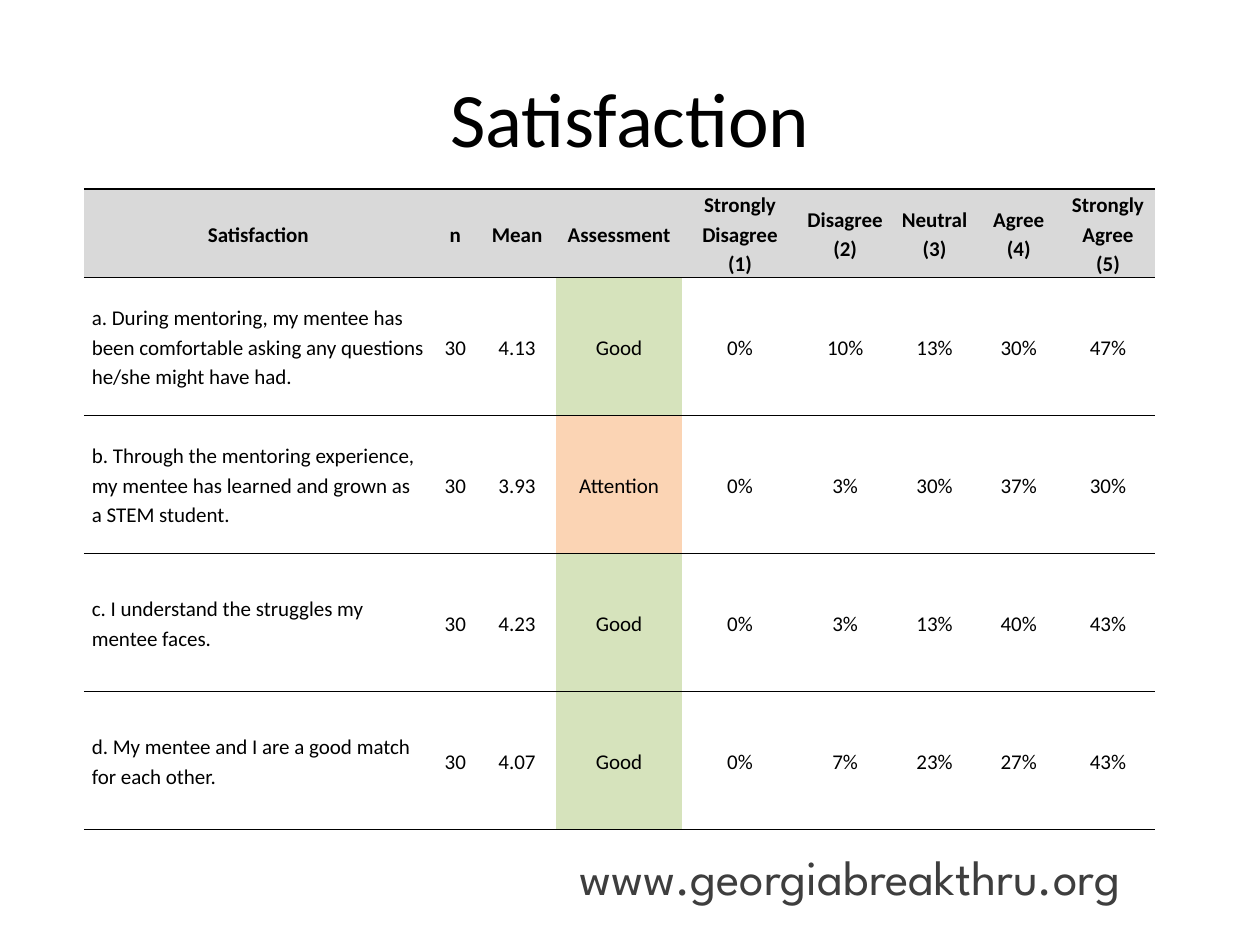
from lxml import etree
from pptx import Presentation
from pptx.dml.color import RGBColor
from pptx.enum.text import MSO_ANCHOR, PP_ALIGN
from pptx.oxml.ns import qn
from pptx.util import Pt

LEFT, CENTER = PP_ALIGN.LEFT, PP_ALIGN.CENTER
TOP, MIDDLE = MSO_ANCHOR.TOP, MSO_ANCHOR.MIDDLE

TITLE = "Satisfaction"
WEBSITE = "www.georgiabreakthru.org"
HEADERS = ["Satisfaction", "n", "Mean", "Assessment", "Strongly Disagree (1)",
           "Disagree (2)", "Neutral (3)", "Agree (4)", "Strongly Agree\n(5)"]
ANSWERS = [
    ["a. During mentoring, my mentee has been comfortable asking any questions "
     "he/she might have had.",
     "30", "4.13", "Good", "0%", "10%", "13%", "30%", "47%"],
    ["b. Through the mentoring experience, my mentee has learned and grown as "
     "a STEM student.",
     "30", "3.93", "Attention", "0%", "3%", "30%", "37%", "30%"],
    ["c. I understand the struggles my mentee faces.",
     "30", "4.23", "Good", "0%", "3%", "13%", "40%", "43%"],
    ["d. My mentee and I are a good match for each other.",
     "30", "4.07", "Good", "0%", "7%", "23%", "27%", "43%"],
]
COLUMN_WIDTHS = [199.2, 26, 44.6, 72, 66.2, 54, 48.2, 48, 54]
HEADER_HEIGHT, ANSWER_HEIGHT = 50.4, 78.9
TABLE_LEFT, TABLE_TOP = 48, 108
BLACK, HEADER_FILL = "000000", "D9D9D9"
ASSESSMENT_FILLS = {"Good": "D6E3BC", "Attention": "FBD4B4"}


def color(value):
    return RGBColor.from_string(value)


def write(frame, text, size, align, font="Calibri", ink=BLACK, bold=False, spacing=None):
    """Fill a text frame, one paragraph for each line of the text."""
    frame.word_wrap = True
    for index, line in enumerate(text.split("\n")):
        para = frame.add_paragraph() if index else frame.paragraphs[0]
        para.alignment = align
        if spacing:
            para.line_spacing = spacing
        span = para.add_run()
        span.text = line
        span.font.name = font
        span.font.size = Pt(size)
        span.font.bold = bold
        span.font.color.rgb = color(ink)


def add_text(page, place, anchor, *args, **style):
    box = page.shapes.add_textbox(*map(Pt, place))
    box.text_frame.vertical_anchor = anchor
    write(box.text_frame, *args, **style)


def set_borders(cell, top, bottom):
    """Rule a cell above and below only; widths are in points."""
    properties = cell._tc.get_or_add_tcPr()
    for side, width in (("L", 0), ("R", 0), ("T", top), ("B", bottom)):
        line = etree.SubElement(properties, qn(f"a:ln{side}"), w=str(Pt(width)))
        if width:
            fill = etree.SubElement(line, qn("a:solidFill"))
            etree.SubElement(fill, qn("a:srgbClr"), val=BLACK)
        else:
            etree.SubElement(line, qn("a:noFill"))


def add_results(page):
    rows = [HEADERS] + ANSWERS
    heights = [HEADER_HEIGHT] + [ANSWER_HEIGHT] * len(ANSWERS)
    frame = page.shapes.add_table(
        len(rows), len(HEADERS), Pt(TABLE_LEFT), Pt(TABLE_TOP),
        Pt(sum(COLUMN_WIDTHS)), Pt(sum(heights)))
    table = frame.table
    table.first_row = table.horz_banding = False
    for column, width in zip(table.columns, COLUMN_WIDTHS):
        column.width = Pt(width)
    for r, (values, height) in enumerate(zip(rows, heights)):
        table.rows[r].height = Pt(height)
        is_header = r == 0
        for c, value in enumerate(values):
            cell = table.cell(r, c)
            cell.margin_left = cell.margin_right = Pt(4.5)
            cell.margin_top = cell.margin_bottom = 0
            cell.vertical_anchor = MIDDLE
            set_borders(cell, 1 if is_header else 0.5, 0.5)
            fill = HEADER_FILL if is_header else ASSESSMENT_FILLS.get(value)
            if fill:
                cell.fill.solid()
                cell.fill.fore_color.rgb = color(fill)
            else:
                cell.fill.background()
            align = CENTER if is_header or c else LEFT
            write(cell.text_frame, value, 12, align, bold=is_header, spacing=1.15)


def main():
    deck = Presentation()
    deck.slide_width, deck.slide_height = Pt(720), Pt(540)
    page = deck.slides.add_slide(deck.slide_layouts[6])
    add_text(page, (36, 21.6, 648, 90), MIDDLE, TITLE, 44, CENTER)
    add_results(page)
    add_text(page, (324, 480, 384, 28.8), TOP, WEBSITE, 28, LEFT,
             font="League Spartan", ink="3E3E3E")
    deck.save("out.pptx")


if __name__ == "__main__":
    main()
